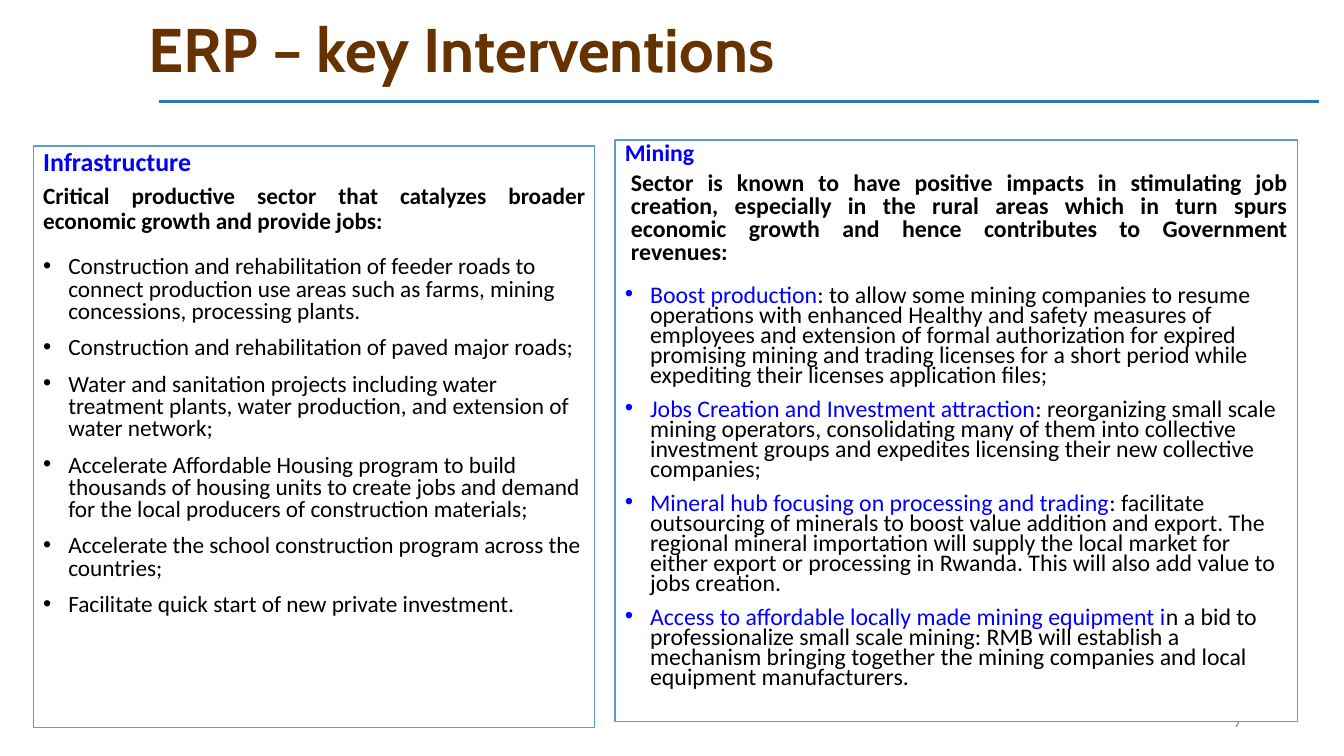
from lxml import etree
from pptx import Presentation
from pptx.dml.color import RGBColor
from pptx.enum.shapes import MSO_CONNECTOR, MSO_SHAPE
from pptx.enum.text import MSO_ANCHOR, MSO_AUTO_SIZE, PP_ALIGN
from pptx.oxml.ns import qn
from pptx.util import Inches, Pt

LEFT, RIGHT, JUST = PP_ALIGN.LEFT, PP_ALIGN.RIGHT, PP_ALIGN.JUSTIFY
TOP, MIDDLE = MSO_ANCHOR.TOP, MSO_ANCHOR.MIDDLE
BLUE, BLACK = "0000FF", "000000"


def style(run, size, color, bold=False, font="Calibri"):
    run.font.size, run.font.bold, run.font.name = Pt(size), bold, font
    run.font.color.rgb = RGBColor.from_string(color)


def indent(para, left, hang=0):
    """Set the left margin and, with a hanging indent, a bullet."""
    props = para._p.get_or_add_pPr()
    props.set("marL", str(Inches(left)))
    props.set("indent", str(-Inches(hang)))
    if hang:
        etree.SubElement(props, qn("a:buFont")).set("typeface", "Arial")
        etree.SubElement(props, qn("a:buChar")).set("char", "•")


prs = Presentation()
prs.slide_width, prs.slide_height = Inches(13.33), Inches(7.5)
slide = prs.slides.add_slide(prs.slide_layouts[5])
shapes = slide.shapes

# Title and rule
title = shapes.title
title.left, title.top = Inches(1.23), Inches(0.07)
title.width, title.height = Inches(11.5), Inches(0.91)
frame = title.text_frame
frame.text = "ERP – key Interventions"
frame.auto_size = MSO_AUTO_SIZE.NONE
frame.vertical_anchor = MIDDLE
frame.margin_left = Inches(0.24)
head = frame.paragraphs[0]
head.alignment, head.line_spacing = LEFT, 0.9
style(head.runs[0], 44, "663300", True, "Cabin")

rule = shapes.add_connector(MSO_CONNECTOR.STRAIGHT, Inches(1.58), Inches(1.01),
                            Inches(13.08), Inches(1.01))
rule.line.color.rgb = RGBColor.from_string("2E75B6")
rule.line.width = Pt(2.25)
etree.SubElement(rule._element.spPr, qn("a:effectLst"))

# Page number
page = shapes.add_textbox(Inches(9.42), Inches(6.95), Inches(3), Inches(0.4))
page.text_frame.word_wrap = True
page.text_frame.vertical_anchor = MIDDLE
page.text_frame.text = "7"
number = page.text_frame.paragraphs[0]
number.alignment = RIGHT
style(number.runs[0], 12, "8C8C8C")

# Panels: left, top, width, heading size, text size, heading and bullet
# spacing, intro spacing, intro indent, heading, intro, (lead, rest) bullets
panels = [
    (0.33, 1.45, 5.57, 18.5, 16.6, 0.8, 0.9, 0, "Infrastructure",
     "Critical productive sector that catalyzes broader economic growth and "
     "provide jobs:",
     [("", "Construction and rehabilitation of feeder roads to connect "
       "production use areas such as farms, mining concessions, processing "
       "plants."),
      ("", "Construction and rehabilitation of paved major roads;"),
      ("", "Water and sanitation projects including water treatment plants, "
       "water production, and extension of water network;"),
      ("", "Accelerate Affordable Housing program to build thousands of "
       "housing units to create jobs and demand for the local producers of "
       "construction materials;"),
      ("", "Accelerate the school construction program across the countries;"),
      ("", "Facilitate quick start of new private investment.")]),
    (6.1, 1.39, 6.77, 17, 17, 0.7, 0.8, 0.06, "Mining",
     "Sector is known to have positive impacts in stimulating job creation, "
     "especially in the rural areas which in turn spurs economic growth and "
     "hence contributes to Government revenues:",
     [("Boost production",
       ": to allow some mining companies to resume operations with enhanced "
       "Healthy and safety measures of employees and extension of formal "
       "authorization for expired promising mining and trading licenses for a "
       "short period while expediting their licenses application files;"),
      ("Jobs Creation and Investment attraction",
       ": reorganizing small scale mining operators, consolidating many of "
       "them into collective investment groups and expedites licensing their "
       "new collective companies;"),
      ("Mineral hub focusing on processing and trading",
       ": facilitate outsourcing of minerals to boost value addition and "
       "export. The regional mineral importation will supply the local market "
       "for either export or processing in Rwanda. This will also add value "
       "to jobs creation."),
      ("Access to affordable locally made mining equipment i",
       "n a bid to professionalize small scale mining: RMB will establish a "
       "mechanism bringing together the mining companies and local equipment "
       "manufacturers.")]),
]

for (left, top, width, big, size, tight, loose, inset,
     name, intro, items) in panels:
    box = shapes.add_shape(MSO_SHAPE.RECTANGLE, Inches(left), Inches(top),
                           Inches(width), Inches(5.77))
    box.shadow.inherit = False
    box.fill.solid()
    box.fill.fore_color.rgb = RGBColor.from_string("FFFFFF")
    box.line.color.rgb = RGBColor.from_string("5B9BD5")
    box.line.width = Pt(1)
    frame = box.text_frame
    frame.word_wrap = True
    frame.vertical_anchor = TOP
    frame.text = name
    head = frame.paragraphs[0]
    head.alignment, head.line_spacing = LEFT, tight
    style(head.runs[0], big, BLUE, True)

    lead = frame.add_paragraph()
    lead.text = intro
    indent(lead, inset)
    lead.alignment, lead.line_spacing = JUST, loose
    lead.space_before = lead.space_after = Pt(6)
    style(lead.runs[0], size, BLACK, True)

    for item in items:
        para = frame.add_paragraph()
        indent(para, 0.25, 0.25)
        para.alignment, para.line_spacing = LEFT, tight
        para.space_before = Pt(10)
        for text, color in zip(item, (BLUE, BLACK)):
            if text:
                run = para.add_run()
                run.text = text
                style(run, size, color)

prs.save("out.pptx")
